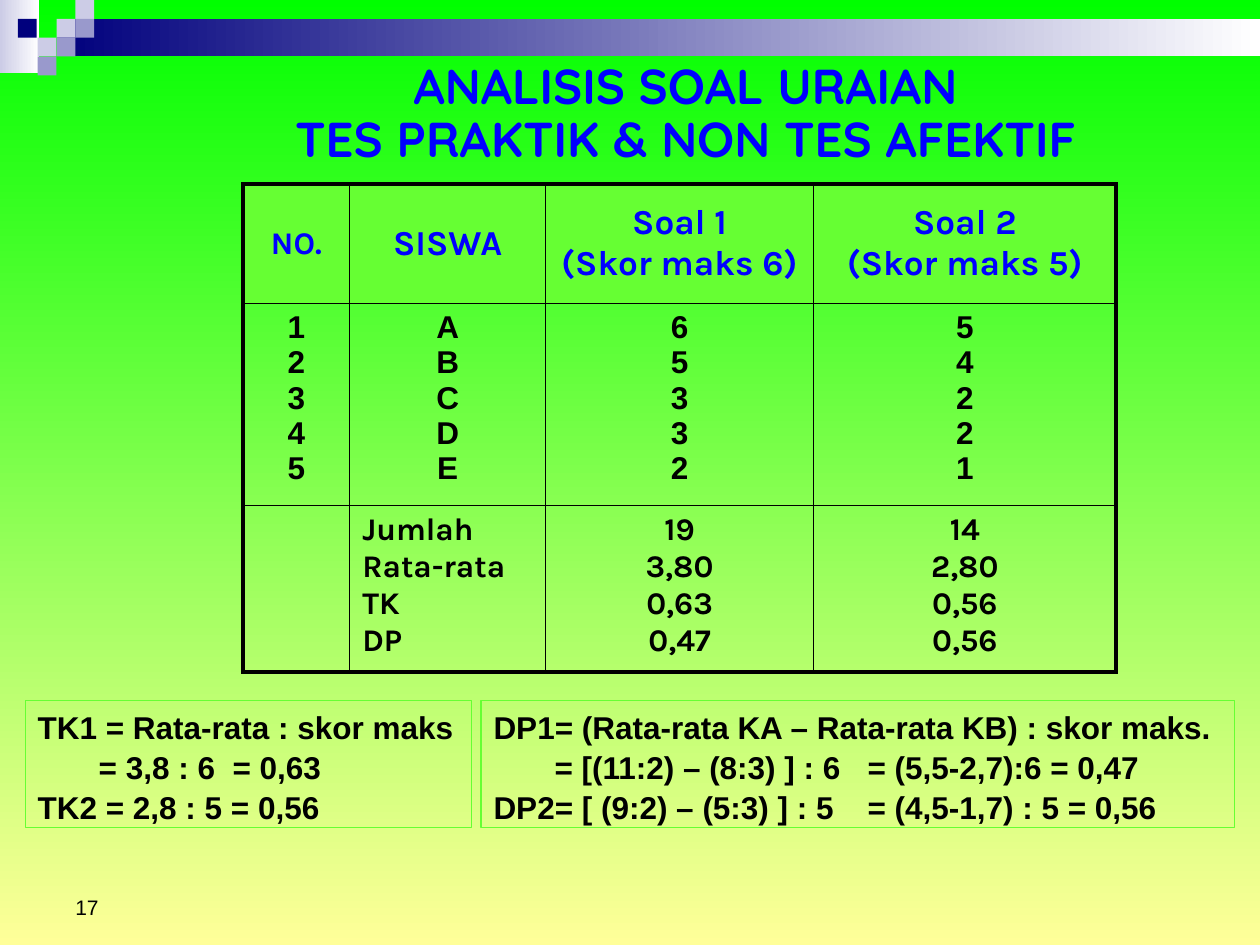
"""Build the item analysis slide with its score table and formula boxes."""
import pptx
import pptx.util
import pptx.dml.color
import pptx.enum.shapes
import pptx.enum.text
import pptx.oxml.ns
from lxml import etree

Cm, Pt = pptx.util.Cm, pptx.util.Pt
ALIGN, ANCHOR = pptx.enum.text.PP_ALIGN, pptx.enum.text.MSO_ANCHOR
RECT = pptx.enum.shapes.MSO_SHAPE.RECTANGLE

BLACK, BLUE, GREEN = "000000", "0000FF", "66FF33"
NAVY, LILAC, VIOLET = "00007D", "CCCCE6", "9999CC"

TITLE = ["ANALISIS SOAL URAIAN", "TES PRAKTIK & NON TES AFEKTIF"]
HEADER = [["NO."], ["SISWA"], ["Soal 1", "(Skor maks 6)"], ["Soal 2", "(Skor maks 5)"]]
SCORES = [list("12345"), list("ABCDE"), list("65332"), list("54221")]
SUMMARY = [[], ["Jumlah", "Rata-rata", "TK", "DP"],
           ["19", "3,80", "0,63", "0,47"], ["14", "2,80", "0,56", "0,56"]]
COLUMNS = [2.15, 3.95, 5.4, 6.1]
ROWS = [2.41, 4.07, 3.36]

FORMULAS = [
    (0.51, 8.99, [1.23, 3.93], [
        "TK1 = Rata-rata : skor maks",
        "\t= 3,8 : 6\t= 0,63",
        "TK2 = 2,8 : 5 = 0,56"]),
    (9.7, 15.19, [1.23, 7.54], [
        "DP1= (Rata-rata KA – Rata-rata KB) : skor maks.",
        "\t= [(11:2) – (8:3) ] : 6\t= (5,5-2,7):6 = 0,47",
        "DP2= [ (9:2) – (5:3) ] : 5\t= (4,5-1,7) : 5 = 0,56"]),
]

TILE = 0.38
TILES = [(3, 1, LILAC), (4, 0, LILAC), (4, 1, VIOLET), (2, 2, LILAC),
         (0.95, 1, NAVY), (3, 2, VIOLET), (2, 3, VIOLET)]


def rgb(value):
    return pptx.dml.color.RGBColor.from_string(value)


def set_gradient(fill, start, end, angle=0):
    fill.gradient()
    fill.gradient_angle = angle
    for stop, position, color in zip(fill.gradient_stops, (0, 1), (start, end)):
        stop.position = position
        stop.color.rgb = rgb(color)


def write(tf, lines, size=18, font="Arial", color=BLACK, bold=True,
          align=ALIGN.LEFT, anchor=ANCHOR.TOP, spacing=None, tabs=()):
    tf.word_wrap = True
    tf.vertical_anchor = anchor
    for i, line in enumerate(lines):
        p = tf.paragraphs[0] if i == 0 else tf.add_paragraph()
        p.alignment = align
        if spacing:
            p.line_spacing = spacing
        if tabs and "\t" in line:
            tab_list = etree.SubElement(p._p.get_or_add_pPr(), pptx.oxml.ns.qn("a:tabLst"))
            for tab in tabs:
                etree.SubElement(tab_list, pptx.oxml.ns.qn("a:tab"), pos=str(Cm(tab)), algn="l")
        r = p.add_run()
        r.text = line
        r.font.size, r.font.name, r.font.bold = Pt(size), font, bold
        r.font.color.rgb = rgb(color)


def add_rect(s, left, top, width, height):
    sp = s.shapes.add_shape(RECT, Cm(left), Cm(top), Cm(width), Cm(height))
    sp.shadow.inherit = False
    sp.line.fill.background()
    return sp


def set_borders(cell, widths):
    for side, width in zip("LRTB", widths):
        ln = etree.SubElement(cell._tc.get_or_add_tcPr(), pptx.oxml.ns.qn("a:ln" + side),
                              w=str(Pt(width)))
        fill = etree.SubElement(ln, pptx.oxml.ns.qn("a:solidFill"))
        etree.SubElement(fill, pptx.oxml.ns.qn("a:srgbClr"), val=BLACK)


def cell_format(row, col):
    if row == 0:
        return dict(size=18 if col == 0 else 20, font="Karla", color=BLUE,
                    align=ALIGN.CENTER, anchor=ANCHOR.MIDDLE)
    if row == 1:
        return dict(align=ALIGN.CENTER)
    return dict(font="Karla", align=ALIGN.LEFT if col == 1 else ALIGN.CENTER)


def add_decoration(s):
    set_gradient(add_rect(s, 0, 0, 0.79, 1.47).fill, LILAC, "FFFFFF")
    set_gradient(add_rect(s, 3 * TILE, TILE, 25.4 - 3 * TILE, 2 * TILE).fill, NAVY, "FFFFFF")
    for col, row, color in TILES:
        sp = add_rect(s, col * TILE, row * TILE, TILE, TILE)
        sp.fill.solid()
        sp.fill.fore_color.rgb = rgb(color)


def add_scores(s):
    table = s.shapes.add_table(len(ROWS), len(COLUMNS), Cm(4.9), Cm(3.71),
                               Cm(sum(COLUMNS)), Cm(sum(ROWS))).table
    table.first_row = table.horz_banding = False
    for column, width in zip(table.columns, COLUMNS):
        column.width = Cm(width)
    for row, height in zip(table.rows, ROWS):
        row.height = Cm(height)
    for i, texts in enumerate((HEADER, SCORES, SUMMARY)):
        for j, lines in enumerate(texts):
            cell = table.cell(i, j)
            outer = (j == 0, j == len(COLUMNS) - 1, i == 0, i == len(ROWS) - 1)
            set_borders(cell, [2.25 if edge else 1 for edge in outer])
            if i == 0:
                cell.fill.solid()
                cell.fill.fore_color.rgb = rgb(GREEN)
            else:
                cell.fill.background()
            style = cell_format(i, j)
            cell.vertical_anchor = style.pop("anchor", ANCHOR.TOP)
            write(cell.text_frame, lines, anchor=None, **style)


def add_formulas(s):
    for left, width, tabs, lines in FORMULAS:
        sp = add_rect(s, left, 14.12, width, 2.57)
        sp.fill.background()
        sp.line.color.rgb = rgb(GREEN)
        sp.line.width = Pt(0.75)
        write(sp.text_frame, lines, spacing=1.05, tabs=tabs)


def main():
    prs = pptx.Presentation()
    prs.slide_width, prs.slide_height = Cm(25.4), Cm(19.05)
    s = prs.slides.add_slide(prs.slide_layouts[5])
    set_gradient(s.background.fill, "00FF00", "FFFF99", 270)
    add_decoration(s)
    title = s.shapes.title
    title.left, title.top, title.width, title.height = Cm(4.83), Cm(1.12), Cm(17.98), Cm(2.39)
    title.text_frame.auto_size = pptx.enum.text.MSO_AUTO_SIZE.NONE
    write(title.text_frame, TITLE, size=28, font="Quicksand", color=BLUE,
          align=ALIGN.CENTER, spacing=0.9)
    add_scores(s)
    add_formulas(s)
    number = s.shapes.add_textbox(Cm(1.27), Cm(17.35), Cm(5.92), Cm(1.32))
    write(number.text_frame, ["17"], size=12, bold=False, anchor=ANCHOR.BOTTOM)
    prs.save("out.pptx")


if __name__ == "__main__":
    main()
